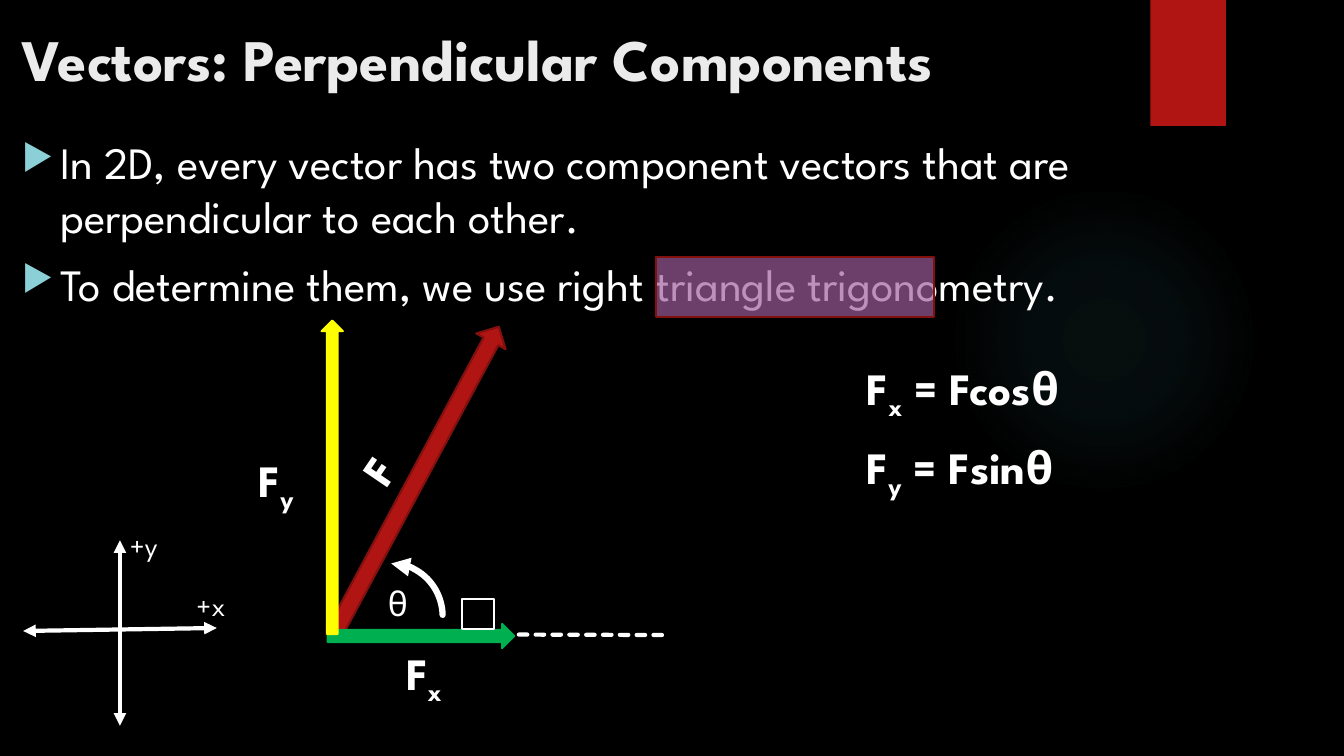
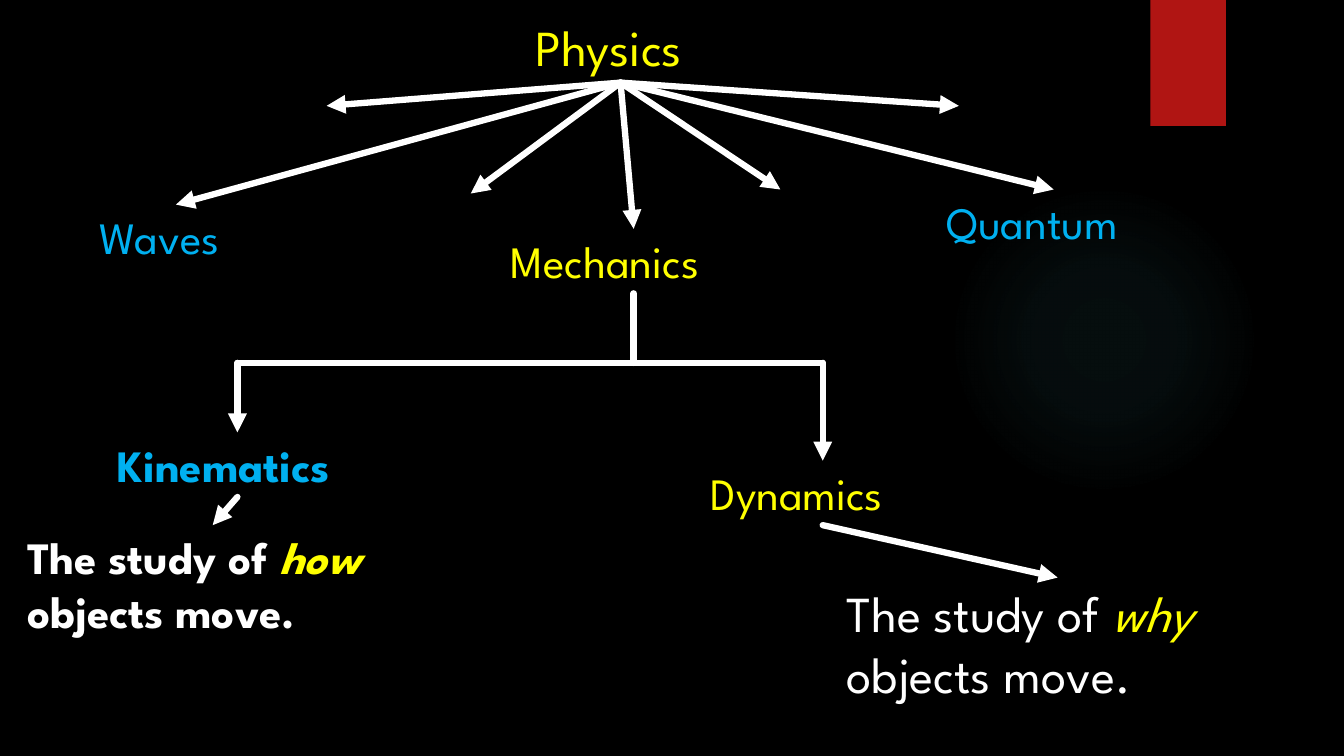
from dataclasses import dataclass
from typing import NamedTuple, Optional, Union

from lxml.etree import SubElement
from pptx import Presentation
from pptx.dml.color import RGBColor
from pptx.enum.dml import MSO_LINE
from pptx.enum.shapes import MSO_CONNECTOR, MSO_SHAPE as Preset
from pptx.enum.text import MSO_ANCHOR
from pptx.oxml import parse_xml
from pptx.oxml.ns import nsdecls, qn
from pptx.util import Inches, Pt

CELL = Inches(0.1)
FONT = "League Spartan"
BLACK = RGBColor(0x00, 0x00, 0x00)
WHITE = RGBColor(0xFF, 0xFF, 0xFF)
TITLE_GREY = RGBColor(0xEB, 0xEB, 0xEB)
RED = RGBColor(0xB0, 0x15, 0x13)
DARK_RED = RGBColor(0x82, 0x10, 0x0E)
GREEN = RGBColor(0x00, 0xB0, 0x50)
YELLOW = RGBColor(0xFF, 0xFF, 0x00)
BLUE = RGBColor(0x00, 0xB0, 0xF0)
PURPLE = RGBColor(0x9E, 0x5E, 0x9B)
TEAL = RGBColor(0x50, 0xB9, 0xC1)
BULLET_TEAL = RGBColor(0x8A, 0xD0, 0xD6)
TOP, BOTTOM = 0, 2
GLOW_STOPS = ((0, 7), (36, 6), (69, 0))


class Box(NamedTuple):
    column: float
    row: float
    columns: float
    rows: float

    def lengths(self) -> list[int]:
        return [round(value * CELL) for value in self]


class Point(NamedTuple):
    column: float
    row: float


class Joint(NamedTuple):
    shape: object
    side: int


End = Union[Point, Joint]


class Piece(NamedTuple):
    text: str
    color: Optional[RGBColor] = None
    italic: bool = False
    subscript: bool = False


@dataclass(frozen=True)
class Label:
    box: Box
    pieces: tuple[Piece, ...]
    size: float = 32
    color: RGBColor = WHITE
    bold: bool = False
    rotation: float = 0


@dataclass(frozen=True)
class Figure:
    preset: Preset
    box: Box
    fill: Optional[RGBColor] = None
    line: Optional[RGBColor] = None
    line_width: float = 1.5
    rotation: float = 0


def words(text: str) -> tuple[Piece, ...]:
    return (Piece(text),)


def component(axis: str, rest: str = "") -> tuple[Piece, ...]:
    pieces = (Piece("F"), Piece(axis, subscript=True))
    return pieces + words(rest) if rest else pieces


def study(question: str) -> tuple[Piece, ...]:
    return Piece("The study of "), Piece(question, YELLOW, italic=True), Piece(" objects move.")


def add_label(shapes, label: Label):
    shape = shapes.add_textbox(*label.box.lengths())
    shape.rotation = label.rotation
    shape.text_frame.word_wrap = True
    paragraph = shape.text_frame.paragraphs[0]
    for piece in label.pieces:
        run = paragraph.add_run()
        run.text = piece.text
        font = run.font
        font.name, font.size = FONT, Pt(label.size)
        font.bold, font.italic = label.bold, piece.italic
        font.color.rgb = piece.color or label.color
        if piece.subscript:
            run._r.get_or_add_rPr().set("baseline", "-25000")
    return shape


def add_figure(shapes, figure: Figure):
    shape = shapes.add_shape(figure.preset, *figure.box.lengths())
    shape.shadow.inherit = False
    shape.rotation = figure.rotation
    if figure.fill is None:
        shape.fill.background()
    else:
        shape.fill.solid()
        shape.fill.fore_color.rgb = figure.fill
    if figure.line is None:
        shape.line.fill.background()
    else:
        shape.line.color.rgb = figure.line
        shape.line.width = Pt(figure.line_width)
    return shape


def set_ends(line, head: bool, tail: bool) -> None:
    element = line._get_or_add_ln()
    element.set("cap", "rnd")
    SubElement(element, qn("a:round"))
    for tag, wanted in (("a:headEnd", head), ("a:tailEnd", tail)):
        if wanted:
            SubElement(element, qn(tag)).set("type", "triangle")


def place(end: End) -> tuple[int, int]:
    if isinstance(end, Point):
        return round(end.column * CELL), round(end.row * CELL)
    shape = end.shape
    return shape.left + shape.width // 2, shape.top + (shape.height if end.side == BOTTOM else 0)


def add_line(shapes, start: End, finish: End, width: float = 4.5, head: bool = False,
             tail: bool = True, dashed: bool = False) -> None:
    connector = shapes.add_connector(MSO_CONNECTOR.STRAIGHT, *place(start), *place(finish))
    if isinstance(start, Joint):
        connector.begin_connect(start.shape, start.side)
    if isinstance(finish, Joint):
        connector.end_connect(finish.shape, finish.side)
    connector.line.color.rgb = WHITE
    connector.line.width = Pt(width)
    if dashed:
        connector.line.dash_style = MSO_LINE.SQUARE_DOT
    set_ends(connector.line, head, tail)
    SubElement(connector._element.spPr, qn("a:effectLst"))


def add_bullets(shapes, box: Box, items: tuple[str, ...]) -> None:
    frame = shapes.add_textbox(*box.lengths()).text_frame
    frame.word_wrap = True
    frame.text = "\n".join(items)
    for index, paragraph in enumerate(frame.paragraphs):
        properties = paragraph._p.get_or_add_pPr()
        properties.set("marL", str(Inches(0.38)))
        properties.set("indent", str(-Inches(0.38)))
        color = SubElement(properties, qn("a:buClr"))
        SubElement(color, qn("a:srgbClr")).set("val", str(BULLET_TEAL))
        SubElement(properties, qn("a:buSzPct")).set("val", "80000")
        SubElement(properties, qn("a:buChar")).set("char", "▶")
        if index:
            paragraph.space_before = Pt(10)
        for run in paragraph.runs:
            run.font.name, run.font.size = FONT, Pt(32)
            run.font.color.rgb = WHITE


def add_base(presentation):
    slide = presentation.slides.add_slide(presentation.slide_layouts[6])
    slide.background.fill.solid()
    slide.background.fill.fore_color.rgb = BLACK
    glow = add_figure(slide.shapes, Figure(Preset.OVAL, Box(94.1, 18.3, 30.8, 30.8), TEAL))
    stops = "".join(
        f'<a:gs pos="{position * 1000}"><a:srgbClr val="{TEAL}">'
        f'<a:alpha val="{alpha * 1000}"/></a:srgbClr></a:gs>'
        for position, alpha in GLOW_STOPS
    )
    gradient = parse_xml(
        f'<a:gradFill {nsdecls("a")}><a:gsLst>{stops}</a:gsLst><a:path path="circle">'
        '<a:fillToRect l="50000" t="50000" r="50000" b="50000"/></a:path></a:gradFill>'
    )
    properties = glow._element.spPr
    properties.replace(properties.find(qn("a:solidFill")), gradient)
    add_figure(slide.shapes, Figure(Preset.RECTANGLE, Box(114.1, 0, 7.5, 12.5), RED))
    return slide


def add_axes(slide) -> None:
    shapes = slide.shapes.add_group_shape().shapes
    add_line(shapes, Point(11.9, 53.6), Point(11.9, 72), 3, head=True)
    add_line(shapes, Point(2.3, 62.6), Point(21.5, 62.3), 3, head=True)
    add_label(shapes, Label(Box(11.9, 51.9, 5.6, 4.4), words("+y"), 20))
    add_label(shapes, Label(Box(18.5, 57.9, 6.1, 4.4), words("+x"), 20))


def build_components(presentation) -> None:
    slide = add_base(presentation)
    shapes = slide.shapes
    title = add_label(shapes, Label(Box(1.2, 1.3, 107.3, 9),
                                    words("Vectors: Perpendicular Components"), 42, TITLE_GREY, True))
    title.text_frame.vertical_anchor = MSO_ANCHOR.MIDDLE
    add_bullets(shapes, Box(1.2, 12.9, 108.4, 20.7), (
        "In 2D, every vector has two component vectors that are perpendicular to each other.",
        "To determine them, we use right triangle trigonometry.",
    ))
    add_figure(shapes, Figure(Preset.RIGHT_ARROW, Box(24, 46, 34.6, 3.3), RED, DARK_RED,
                              rotation=298.2))
    add_axes(slide)
    add_line(shapes, Point(33.1, 62.9), Point(66.4, 63), 3, tail=False, dashed=True)
    arc = add_figure(shapes, Figure(Preset.ARC, Box(33.7, 55.9, 10.2, 10.5), line=WHITE,
                                    line_width=4.5))
    arc.adjustments[0], arc.adjustments[1] = 162, 214.94
    set_ends(arc.line, head=True, tail=False)
    for figure in (
        Figure(Preset.RIGHT_ARROW, Box(32.5, 61.9, 18.5, 2.4), GREEN, GREEN),
        Figure(Preset.RIGHT_ARROW, Box(17.4, 46.3, 31.1, 2.1), YELLOW, YELLOW, rotation=270),
        Figure(Preset.RECTANGLE, Box(45.8, 59.4, 3.2, 3), line=WHITE),
    ):
        add_figure(shapes, figure)
    for label in (
        Label(Box(35.5, 43.6, 3.9, 6.4), words("F"), bold=True, rotation=304.3),
        Label(Box(37.5, 57.3, 3.7, 5), words("θ"), 24),
        Label(Box(39.3, 63.6, 6.8, 6.4), component("x"), bold=True),
        Label(Box(24.7, 44.4, 6.8, 6.4), component("y"), bold=True),
        Label(Box(85, 35.3, 24.3, 6.4), component("x", " = Fcosθ"), bold=True),
        Label(Box(85, 43.1, 22.7, 6.4), component("y", " = Fsinθ"), bold=True),
    ):
        add_label(shapes, label)
    highlight = add_figure(shapes, Figure(Preset.RECTANGLE, Box(65.1, 25.5, 27.5, 6),
                                          PURPLE, DARK_RED))
    color = highlight._element.spPr.find(qn("a:solidFill")).find(qn("a:srgbClr"))
    SubElement(color, qn("a:alpha")).set("val", "68000")


def build_branches(presentation) -> None:
    shapes = add_base(presentation).shapes
    physics, waves, quantum, mechanics, kinematics, dynamics, how, why = (
        add_label(shapes, label) for label in (
            Label(Box(52.1, 1.1, 18.9, 7.1), words("Physics"), 36, YELLOW),
            Label(Box(8.9, 20.3, 17.1, 6.4), words("Waves"), color=BLUE),
            Label(Box(92.9, 18.8, 23.2, 6.4), words("Quantum"), color=BLUE),
            Label(Box(49.7, 22.7, 26.3, 6.4), words("Mechanics"), color=YELLOW),
            Label(Box(10.7, 42.9, 25.7, 6.4), words("Kinematics"), color=BLUE, bold=True),
            Label(Box(69.5, 45.7, 24.2, 6.4), words("Dynamics"), color=YELLOW),
            Label(Box(1.7, 52.1, 38.8, 11.8), study("how"), bold=True),
            Label(Box(83, 57.3, 43.8, 13.1), study("why"), 36),
        )
    )
    for finish in (
        Joint(waves, TOP), Joint(mechanics, TOP), Joint(quantum, TOP),
        Point(46.7, 19.2), Point(95.1, 10.5), Point(32.4, 10.5), Point(77.4, 18.8),
    ):
        add_line(shapes, Joint(physics, BOTTOM), finish)
    fork = Point(62.85, 36)
    add_line(shapes, Joint(mechanics, BOTTOM), fork, tail=False)
    for topic, note in ((kinematics, how), (dynamics, why)):
        corner = Point((topic.left + topic.width / 2) / CELL, fork.row)
        add_line(shapes, fork, corner, tail=False)
        add_line(shapes, corner, Joint(topic, TOP))
        add_line(shapes, Joint(topic, BOTTOM), Joint(note, TOP))


def main() -> None:
    presentation = Presentation()
    presentation.slide_width, presentation.slide_height = Inches(13.33), Inches(7.5)
    build_components(presentation)
    build_branches(presentation)
    presentation.save("out.pptx")


if __name__ == "__main__":
    main()
